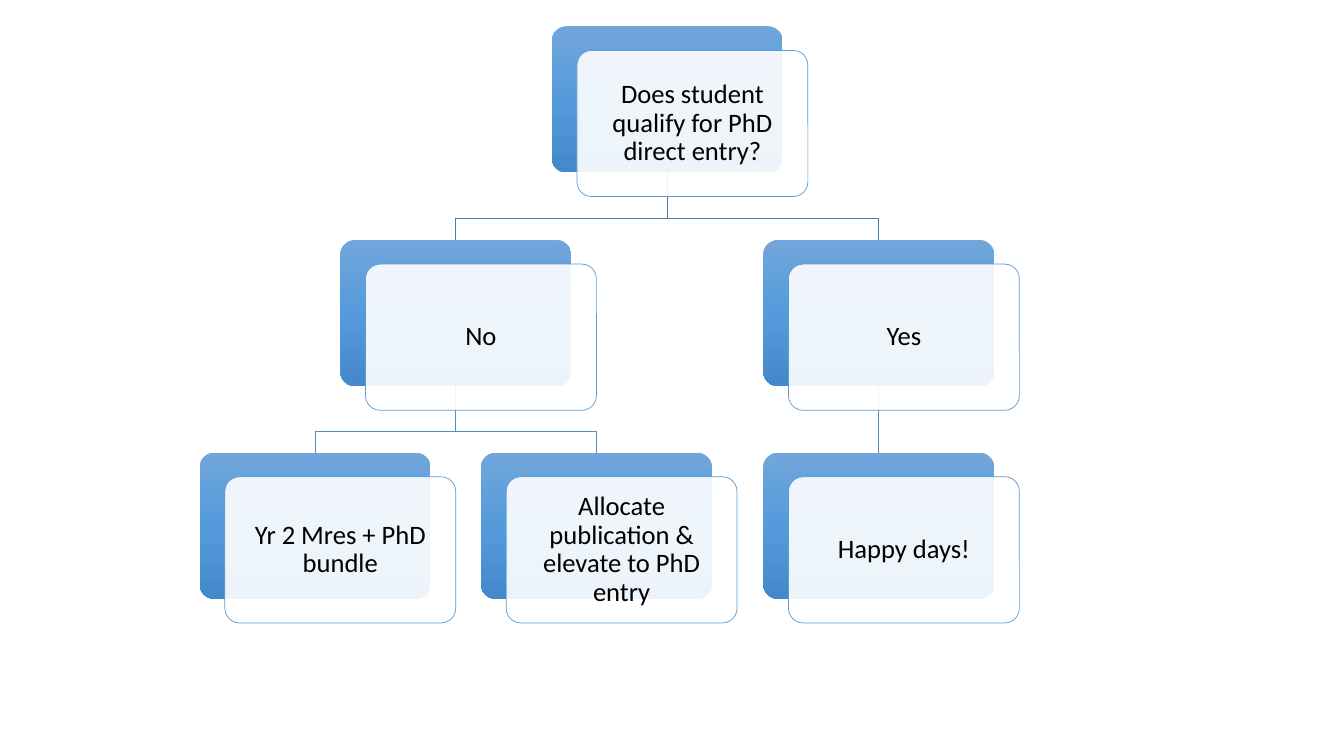
from copy import deepcopy

from lxml import etree
from pptx import Presentation
from pptx import util as u
from pptx.dml import color
from pptx.enum import shapes, text
from pptx.oxml import ns

WIDTH, HEIGHT = 2.29, 1.45
CARD_SHIFT = (0.25, 0.24)
BEND_ABOVE_CHILD = 0.21
ROW_TOPS = (0.26, 2.38, 4.49)

NODES = {
    "bundle": ("Yr 2 Mres + PhD bundle", 2, 1.98, ()),
    "allocate": ("Allocate publication & elevate to PhD entry", 2, 4.77, ()),
    "happy": ("Happy days!", 2, 7.57, ()),
    "no": ("No", 1, None, ("bundle", "allocate")),
    "yes": ("Yes", 1, None, ("happy",)),
    "question": ("Does student qualify for PhD direct entry?", 0, None, ("no", "yes")),
}


def rgb(value):
    return color.RGBColor.from_string(value)


def apply(target, values):
    for name, value in values.items():
        setattr(target, name, value)


class TreePage:
    gradient = ((0, "71A6DB"), (0.5, "559BDB"), (1, "448ACA"))
    link_colours = ("497CAB", "538DC1")
    card_line = "5B9BD5"
    line_width = u.Pt(0.5)
    frame_format = {
        "word_wrap": True,
        "vertical_anchor": text.MSO_ANCHOR.MIDDLE,
        "margin_left": u.Inches(0.12),
        "margin_right": u.Inches(0.12),
        "margin_top": u.Inches(0.12),
        "margin_bottom": u.Inches(0.12),
    }
    para_format = {"alignment": text.PP_ALIGN.CENTER, "line_spacing": 0.9}
    font_format = {"name": "Calibri", "size": u.Pt(19)}

    def __init__(self, deck):
        self.page = deck.slides.add_slide(deck.slide_layouts[6])

    def outline(self, item, hex_colour):
        item.line.color.rgb = rgb(hex_colour)
        item.line.width = self.line_width

    def box(self, left, top):
        box = self.page.shapes.add_shape(
            shapes.MSO_SHAPE.ROUNDED_RECTANGLE,
            u.Inches(left), u.Inches(top), u.Inches(WIDTH), u.Inches(HEIGHT))
        box.adjustments[0] = 0.1
        box.shadow.inherit = False
        return box

    def tile(self, left, top):
        tile = self.box(left, top)
        tile.line.fill.background()
        tile.fill.gradient()
        tile.fill.gradient_angle = 270
        stop_list = tile._element.spPr.find(".//" + ns.qn("a:gsLst"))
        stop_list.append(deepcopy(stop_list[0]))
        for stop, (position, hex_colour) in zip(tile.fill.gradient_stops, self.gradient):
            stop.position = position
            stop.color.rgb = rgb(hex_colour)
        return tile

    def card(self, left, top, words):
        card = self.box(left + CARD_SHIFT[0], top + CARD_SHIFT[1])
        card.fill.solid()
        card.fill.fore_color.rgb = rgb("FFFFFF")
        white = card._element.spPr.find(ns.qn("a:solidFill"))[0]
        etree.SubElement(white, ns.qn("a:alpha"), val="90000")
        self.outline(card, self.card_line)
        apply(card.text_frame, self.frame_format)
        para = card.text_frame.paragraphs[0]
        apply(para, self.para_format)
        span = para.add_run()
        span.text = words
        apply(span.font, self.font_format)
        span.font.color.rgb = rgb("000000")

    def straight_link(self, parent, child, hex_colour):
        link = self.page.shapes.add_connector(shapes.MSO_CONNECTOR.STRAIGHT, 0, 0, 0, 0)
        link.begin_connect(parent, 2)
        link.end_connect(child, 0)
        etree.SubElement(link._element.spPr, ns.qn("a:effectLst"))
        self.outline(link, hex_colour)

    def bent_link(self, parent, child, hex_colour):
        start_x = parent.left + parent.width // 2
        end_x = child.left + child.width // 2
        bend_y = child.top - u.Inches(BEND_ABOVE_CHILD)
        builder = self.page.shapes.build_freeform(start_x, parent.top + parent.height)
        builder.add_line_segments(
            [(start_x, bend_y), (end_x, bend_y), (end_x, child.top)], close=False)
        link = builder.convert_to_shape()
        link.fill.background()
        link.shadow.inherit = False
        self.outline(link, hex_colour)

    def tree(self, nodes):
        lefts, tiles = {}, {}
        for key, (words, row, left, children) in nodes.items():
            if children:
                left = sum(lefts[child] for child in children) / len(children)
            lefts[key] = left
            tiles[key] = self.tile(left, ROW_TOPS[row])
        for key, (words, row, left, children) in nodes.items():
            draw_link = self.straight_link if len(children) == 1 else self.bent_link
            for child in children:
                draw_link(tiles[key], tiles[child], self.link_colours[row])
        for key, (words, row, left, children) in nodes.items():
            self.card(lefts[key], ROW_TOPS[row], words)


def main():
    deck = Presentation()
    apply(deck, {"slide_width": u.Inches(13.33), "slide_height": u.Inches(7.5)})
    TreePage(deck).tree(NODES)
    deck.save("out.pptx")


if __name__ == "__main__":
    main()
